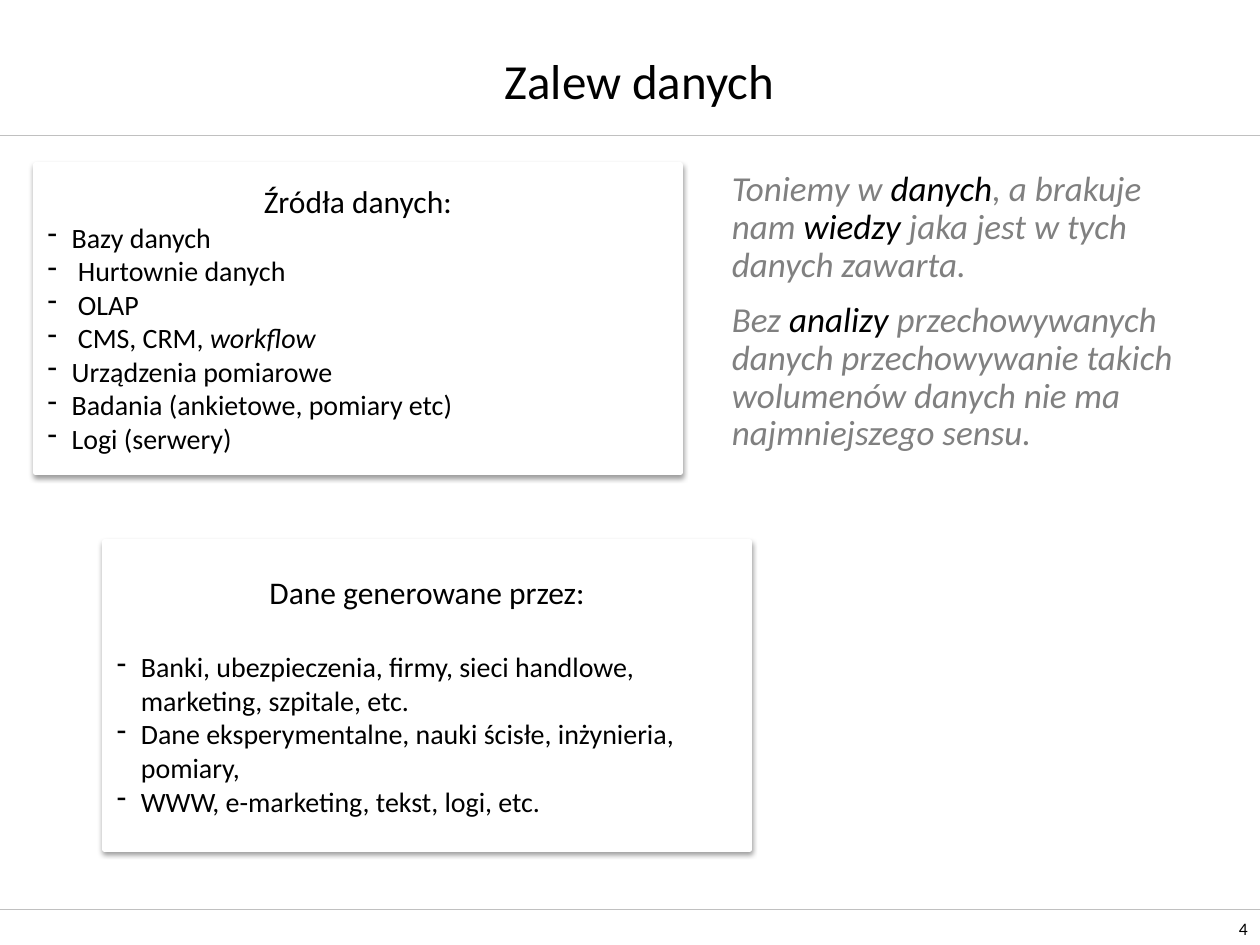
from lxml import etree
from pptx import Presentation
from pptx.dml.color import RGBColor
from pptx.enum.shapes import MSO_CONNECTOR, MSO_SHAPE
from pptx.enum.text import MSO_ANCHOR as ANCHOR, PP_ALIGN as ALIGN
from pptx.oxml import parse_xml
from pptx.oxml.ns import nsdecls, qn
from pptx.util import Inches, Pt

FONT = "Calibri"
BLACK, GREY, WHITE, RULE = "000000", "808080", "FFFFFF", "C0C0C0"
INDENT = Inches(0.19)

SOURCES = [
    [("Bazy danych", False)],
    [(" Hurtownie danych", False)],
    [(" OLAP", False)],
    [(" CMS, CRM, ", False), ("workflow", True)],
    [("Urządzenia pomiarowe", False)],
    [("Badania (ankietowe, pomiary etc)", False)],
    [("Logi (serwery)", False)],
]
PRODUCERS = [
    [("Banki, ubezpieczenia, firmy, sieci handlowe, marketing, szpitale, etc.", False)],
    [("Dane eksperymentalne, nauki ścisłe, inżynieria, pomiary,", False)],
    [("WWW, e-marketing, tekst, logi, etc.", False)],
]
# Each run is (text, colour)
REMARKS = [
    [("Toniemy w ", GREY), ("danych", BLACK), (", a brakuje nam ", GREY),
     ("wiedzy", BLACK), (" jaka jest w tych danych zawarta.", GREY)],
    [("Bez ", GREY), ("analizy", BLACK),
     (" przechowywanych danych przechowywanie takich wolumenów danych "
      "nie ma najmniejszego sensu.", GREY)],
]


def rgb(value):
    return RGBColor.from_string(value)


def add_run(p, text, size, color=BLACK, italic=False):
    r = p.add_run()
    r.text = text
    r.font.name, r.font.size, r.font.italic = FONT, Pt(size), italic
    r.font.color.rgb = rgb(color)


def add_rule(slide, y):
    line = slide.shapes.add_connector(
        MSO_CONNECTOR.STRAIGHT, 0, Inches(y), Inches(10), Inches(y))
    line.line.color.rgb = rgb(RULE)
    line.line.width = Pt(0.25)
    etree.SubElement(line._element.spPr, qn("a:effectLst"))


def set_title(slide, text):
    title = slide.shapes.title
    title.left, title.top = Inches(0.98), Inches(0.36)
    title.width, title.height = Inches(8.19), Inches(0.55)
    tf = title.text_frame
    tf.vertical_anchor = ANCHOR.MIDDLE
    p = tf.paragraphs[0]
    p.alignment = ALIGN.CENTER
    add_run(p, text, 28)


def add_text_box(slide, x, y, w, h):
    box = slide.shapes.add_textbox(Inches(x), Inches(y), Inches(w), Inches(h))
    box.text_frame.word_wrap = True
    return box.text_frame


def add_shadow(sp):
    sp.shadow.inherit = False
    effects = sp._element.spPr.find(qn("a:effectLst"))
    effects.append(parse_xml(
        f'<a:outerShdw {nsdecls("a")} blurRad="{Pt(3.1)}" dist="{Pt(1.6)}" '
        'dir="5400000" rotWithShape="0"><a:srgbClr val="000000">'
        '<a:alpha val="38000"/></a:srgbClr></a:outerShdw>'))


def add_bullet(p):
    pPr = p._p.get_or_add_pPr()
    pPr.set("marL", str(INDENT))
    pPr.set("indent", str(-INDENT))
    etree.SubElement(pPr, qn("a:buChar")).set("char", "-")


def add_card(slide, x, y, heading, items, gap=0):
    sp = slide.shapes.add_shape(
        MSO_SHAPE.RECTANGLE, Inches(x), Inches(y), Inches(5.12), Inches(2.44))
    sp.fill.solid()
    sp.fill.fore_color.rgb = rgb(WHITE)
    sp.line.color.rgb = rgb(WHITE)
    sp.line.width = Pt(3)
    add_shadow(sp)
    tf = sp.text_frame
    tf.word_wrap = True
    tf.vertical_anchor = ANCHOR.MIDDLE
    p = tf.paragraphs[0]
    p.alignment = ALIGN.CENTER
    p.space_after = Pt(gap)
    add_run(p, heading, 18)
    for runs in items:
        p = tf.add_paragraph()
        p.alignment = ALIGN.LEFT
        add_bullet(p)
        for text, italic in runs:
            add_run(p, text, 16, italic=italic)


def add_remarks(slide):
    tf = add_text_box(slide, 5.71, 1.31, 3.78, 2.52)
    for i, runs in enumerate(REMARKS):
        p = tf.add_paragraph() if i else tf.paragraphs[0]
        p.line_spacing = 0.9
        p.space_before = Pt(10 if i else 0)
        for text, color in runs:
            add_run(p, text, 20, color, italic=True)


def add_page_number(slide, number):
    tf = add_text_box(slide, 9.49, 7.22, 0.51, 0.28)
    tf.vertical_anchor = ANCHOR.BOTTOM
    p = tf.paragraphs[0]
    p.alignment = ALIGN.RIGHT
    add_run(p, number, 10)


def main():
    prs = Presentation()
    prs.slide_width, prs.slide_height = Inches(10), Inches(7.5)
    slide = prs.slides.add_slide(prs.slide_layouts[5])

    # Frame: rules, page number, title
    for y in (1.07, 7.22):
        add_rule(slide, y)
    add_page_number(slide, "4")
    set_title(slide, "Zalew danych")

    # Content: remarks and two cards
    add_remarks(slide)
    add_card(slide, 0.28, 1.31, "Źródła danych:", SOURCES)
    add_card(slide, 0.83, 4.3, "Dane generowane przez:", PRODUCERS, gap=22)

    prs.save("out.pptx")


if __name__ == "__main__":
    main()
